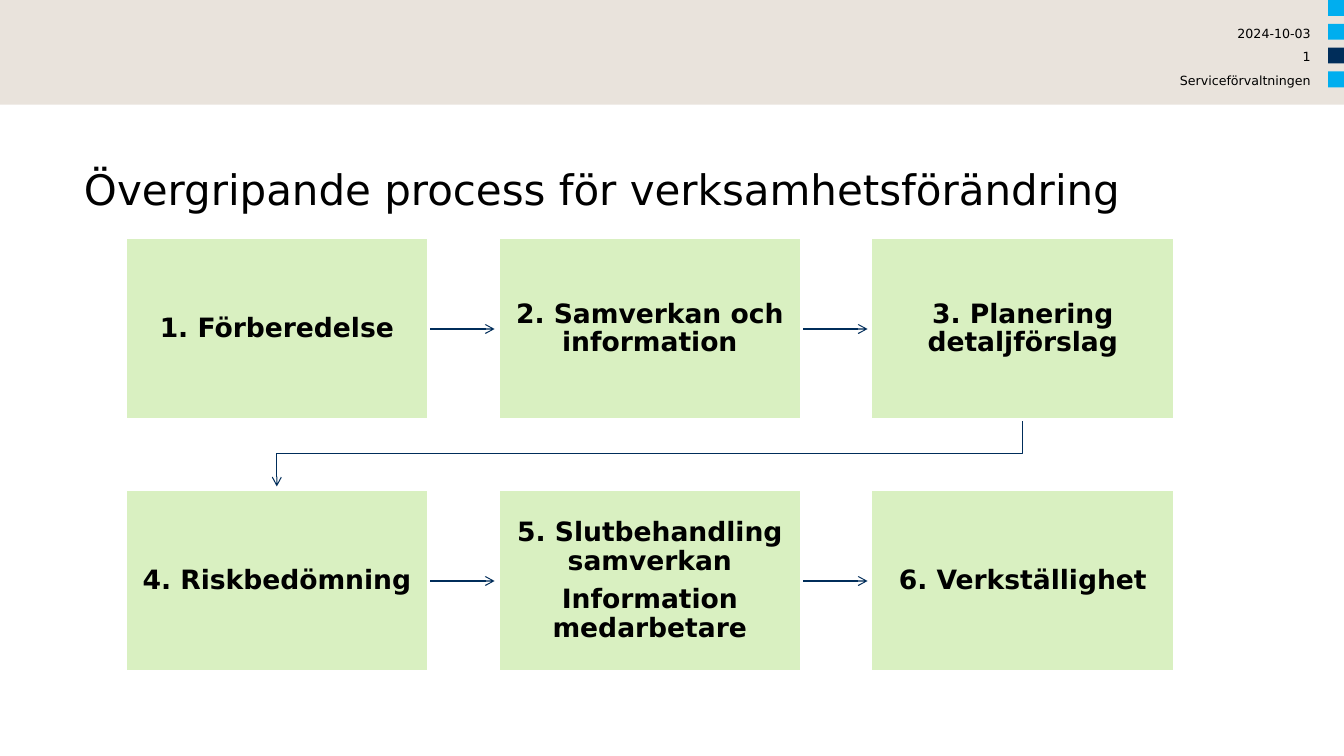
from lxml.etree import SubElement
from pptx import Presentation
from pptx.dml.color import RGBColor
from pptx.enum.shapes import MSO_CONNECTOR, MSO_SHAPE
from pptx.enum.text import MSO_ANCHOR, PP_ALIGN
from pptx.oxml.ns import qn
from pptx.util import Pt

COLORS = {"band": "E9E3DC", "cyan": "00AEEF", "navy": "002D5A",
          "step": "D9F0C1", "white": "FFFFFF", "text": "000000"}
FONT = "DejaVu Sans"
STEPS = [
    ["1. Förberedelse", "2. Samverkan och information", "3. Planering detaljförslag"],
    ["4. Riskbedömning", "5. Slutbehandling samverkan\nInformation medarbetare",
     "6. Verkställighet"],
]


def color(name):
    """Return the named colour."""
    return RGBColor.from_string(COLORS[name])


def add_rect(s, x, y, w, h, fill):
    """Add a plain filled rectangle without outline or shadow."""
    sp = s.shapes.add_shape(MSO_SHAPE.RECTANGLE, Pt(x), Pt(y), Pt(w), Pt(h))
    sp.shadow.inherit = False
    sp.fill.solid()
    sp.fill.fore_color.rgb = color(fill)
    sp.line.fill.background()
    return sp


def set_text(sp, text, size, align, margin=0, anchor=MSO_ANCHOR.TOP, bold=False):
    """Fill a shape with wrapped text in the slide font."""
    tf = sp.text_frame
    tf.word_wrap = True
    tf.vertical_anchor = anchor
    tf.margin_left = tf.margin_right = tf.margin_top = tf.margin_bottom = Pt(margin)
    tf.text = text
    for p in tf.paragraphs:
        p.alignment = align
        for r in p.runs:
            r.font.name, r.font.size, r.font.bold = FONT, Pt(size), bold
            r.font.color.rgb = color("text")
    return tf


def add_text(s, x, y, w, h, text, size, align):
    """Add a text box without margins."""
    sp = s.shapes.add_textbox(Pt(x), Pt(y), Pt(w), Pt(h))
    set_text(sp, text, size, align)


def style_arrow(sp):
    """Give a line its navy colour and an open arrowhead at its end."""
    sp.line.color.rgb = color("navy")
    sp.line.width = Pt(0.75)
    SubElement(sp.line._get_or_add_ln(), qn("a:tailEnd"), type="arrow")
    SubElement(sp._element.spPr, qn("a:effectLst"))


def add_header(s, x, y, w, h):
    """Draw the top band with its details and the coloured squares at the edge."""
    add_rect(s, x, y, w, h, "band")
    side = 11.4
    for i, fill in enumerate(["cyan", "cyan", "navy", "cyan"]):
        add_rect(s, x + w - side, y + i * 17, side, side, fill)
    for i, text in enumerate(["2024-10-03", "1", "Serviceförvaltningen"]):
        add_text(s, x + w - 288, y + 18.7 + i * 16.5, 264.2, 10, text, 9, PP_ALIGN.RIGHT)


def add_step(s, x, y, w, h, text):
    """Draw one process step."""
    sp = add_rect(s, x, y, w, h, "step")
    sp.line.color.rgb = color("white")
    sp.line.width = Pt(2)
    tf = set_text(sp, text, 19, PP_ALIGN.CENTER, 10.6, MSO_ANCHOR.MIDDLE, True)
    for i, p in enumerate(tf.paragraphs):
        p.line_spacing = 0.9
        if i:
            p.space_before = Pt(6.65)


def add_process(s, x, y, w, h):
    """Draw the rows of steps in a box, joined by arrows in reading order."""
    step_w, step_h, tip_gap = 216.7, 130, 2.5
    pitch_x, pitch_y = (w - step_w) / 2, h - step_h
    gap_x, gap_y = pitch_x - step_w, pitch_y - step_h

    for row in range(2):
        mid_y = y + row * pitch_y + step_h / 2
        for col in range(2):
            start = x + col * pitch_x + step_w
            sp = s.shapes.add_connector(MSO_CONNECTOR.STRAIGHT, Pt(start), Pt(mid_y),
                                        Pt(start + gap_x - tip_gap), Pt(mid_y))
            style_arrow(sp)

    first_x, last_x = x + step_w / 2, x + w - step_w / 2
    top = y + step_h
    turn, tip = top + gap_y / 2 - 1, top + gap_y - tip_gap
    fb = s.shapes.build_freeform(Pt(last_x), Pt(top))
    fb.add_line_segments([(Pt(last_x), Pt(turn)), (Pt(first_x), Pt(turn)),
                          (Pt(first_x), Pt(tip))], close=False)
    sp = fb.convert_to_shape()
    sp.fill.background()
    style_arrow(sp)

    for row, texts in enumerate(STEPS):
        for col, text in enumerate(texts):
            add_step(s, x + col * pitch_x, y + row * pitch_y, step_w, step_h, text)


def main():
    """Build and save the slide."""
    prs = Presentation()
    prs.slide_width, prs.slide_height = Pt(960), Pt(540)
    s = prs.slides.add_slide(prs.slide_layouts[6])
    add_header(s, 0, 0, 960, 74.7)
    add_text(s, 60, 117, 808.5, 52, "Övergripande process för verksamhetsförändring",
             30, PP_ALIGN.LEFT)
    add_process(s, 89.4, 170, 749.5, 310)
    prs.save("out.pptx")


if __name__ == "__main__":
    main()
